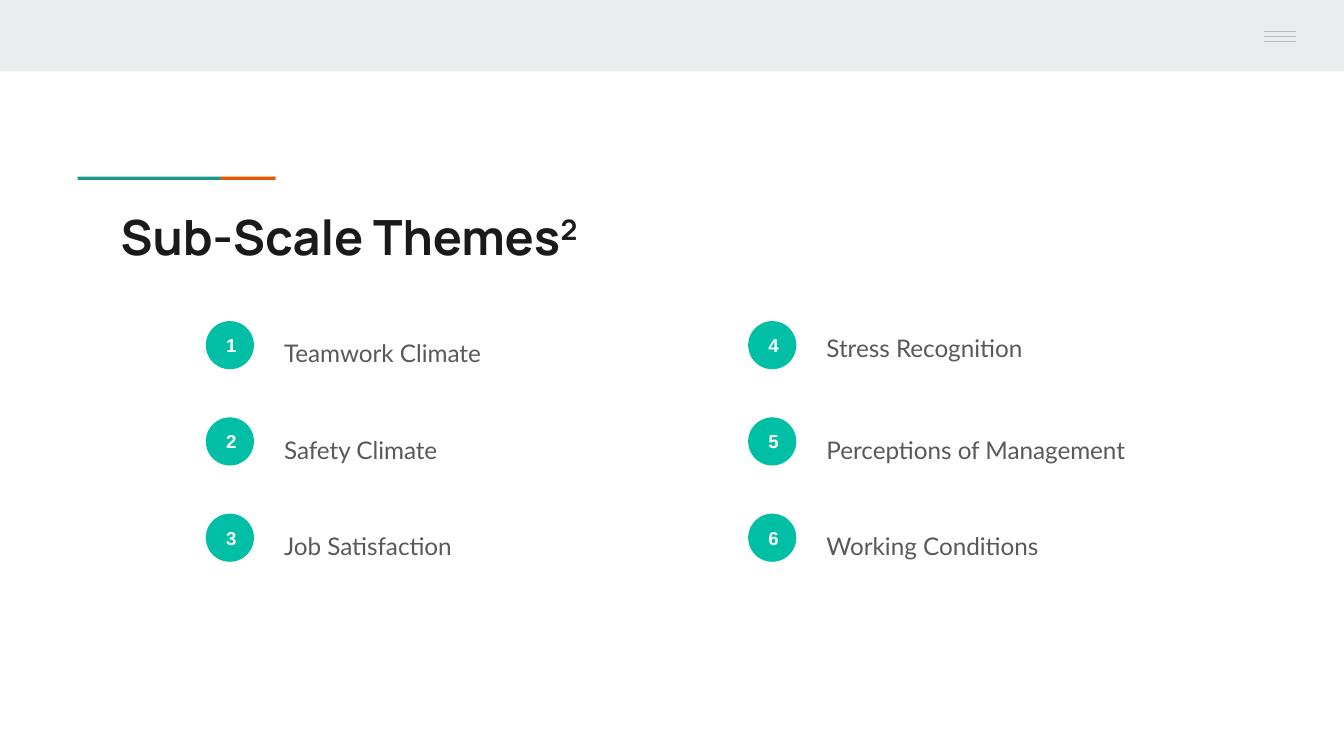
from lxml import etree
from pptx import Presentation
from pptx.dml.color import RGBColor
from pptx.enum.shapes import MSO_CONNECTOR, MSO_SHAPE
from pptx.enum.text import MSO_ANCHOR, PP_ALIGN
from pptx.oxml.ns import qn
from pptx.util import Cm, Pt

RECT, OVAL = MSO_SHAPE.RECTANGLE, MSO_SHAPE.OVAL
LINE = MSO_CONNECTOR.STRAIGHT
TOP, MIDDLE = MSO_ANCHOR.TOP, MSO_ANCHOR.MIDDLE
CENTER = PP_ALIGN.CENTER

PALE = RGBColor(0xE9, 0xED, 0xEE)
SILVER = RGBColor(0xB7, 0xB7, 0xB7)
GREEN = RGBColor(0x1A, 0x99, 0x88)
ORANGE = RGBColor(0xEB, 0x56, 0x00)
TEAL = RGBColor(0x00, 0xBF, 0xA5)
INK = RGBColor(0x1A, 0x1A, 0x1A)
GREY = RGBColor(0x59, 0x59, 0x59)
WHITE = RGBColor(0xFF, 0xFF, 0xFF)

THEMES = [
    ["Teamwork Climate", "Safety Climate", "Job Satisfaction"],
    ["Stress Recognition", "Perceptions of Management", "Working Conditions"],
]


def add_form(slide, kind, x, y, w, h, fill):
    form = slide.shapes.add_shape(kind, Cm(x), Cm(y), Cm(w), Cm(h))
    form.shadow.inherit = False
    form.fill.solid()
    form.fill.fore_color.rgb = fill
    form.line.fill.background()
    return form


def set_text(shape, text, font, size, color, bold=False, anchor=TOP):
    frame = shape.text_frame
    frame.word_wrap = True
    frame.vertical_anchor = anchor
    frame.margin_left = frame.margin_right = Cm(0.25)
    frame.margin_top = frame.margin_bottom = Cm(0.25)
    frame.text = text
    para = frame.paragraphs[0]
    para.font.name = font
    para.font.size = Pt(size)
    para.font.bold = bold
    para.font.color.rgb = color
    return para


def add_text(slide, x, y, w, h, *style):
    box = slide.shapes.add_textbox(Cm(x), Cm(y), Cm(w), Cm(h))
    return set_text(box, *style)


def add_header(slide, x, y, w, h):
    """Pale band with a three-line menu mark at its right."""
    add_form(slide, RECT, x, y, w, h, PALE)
    right = x + w - 0.91
    for row in range(3):
        level = y + 0.6 + row * 0.09
        rule = slide.shapes.add_connector(
            LINE, Cm(right - 0.61), Cm(level), Cm(right), Cm(level))
        rule.line.color.rgb = SILVER
        rule.line.width = Pt(0.75)
        etree.SubElement(rule._element.spPr, qn("a:effectLst"))


def add_title(slide, x, y, w, h):
    """Two-colour accent bar above the heading."""
    add_form(slide, RECT, x, y, 2.71, 0.06, GREEN)
    add_form(slide, RECT, x + 2.71, y, 1.03, 0.06, ORANGE)
    para = add_text(slide, x + 0.56, y + 0.32, w - 0.56, h - 0.32,
                    "Sub-Scale Themes", "Manrope", 26, INK, True)
    note = para.add_run()
    note.text = "2"
    note._r.get_or_add_rPr().set("baseline", "30000")


def add_theme(slide, x, y, w, h, number, name, lift):
    """Numbered disc with the theme name beside it."""
    disc = add_form(slide, OVAL, x, y, 0.91, 0.91, TEAL)
    digit = set_text(disc, str(number), "Arial", 10, WHITE, True, MIDDLE)
    digit.alignment = CENTER
    label = add_text(slide, x + 1.23, y - lift, w - 1.23, h,
                     name, "Lato", 13, GREY)
    label.line_spacing = 1.15


def add_themes(slide, x, y, w, h):
    """Two columns of three themes, numbered down each column."""
    pitch = 1.82
    for col, names in enumerate(THEMES):
        for row, name in enumerate(names):
            number = col * len(names) + row + 1
            lift = 0.1 if number == 4 else 0
            add_theme(slide, x + col * 10.25, y + row * pitch,
                      w - 10.25, h - 2 * pitch, number, name, lift)


def main():
    deck = Presentation()
    deck.slide_width, deck.slide_height = Cm(25.4), Cm(14.29)
    slide = deck.slides.add_slide(deck.slide_layouts[6])
    add_header(slide, 0, 0, 25.4, 1.35)
    add_title(slide, 1.47, 3.34, 21.92, 1.82)
    add_themes(slide, 3.89, 6.07, 19.35, 6.56)
    deck.save("out.pptx")


if __name__ == "__main__":
    main()
